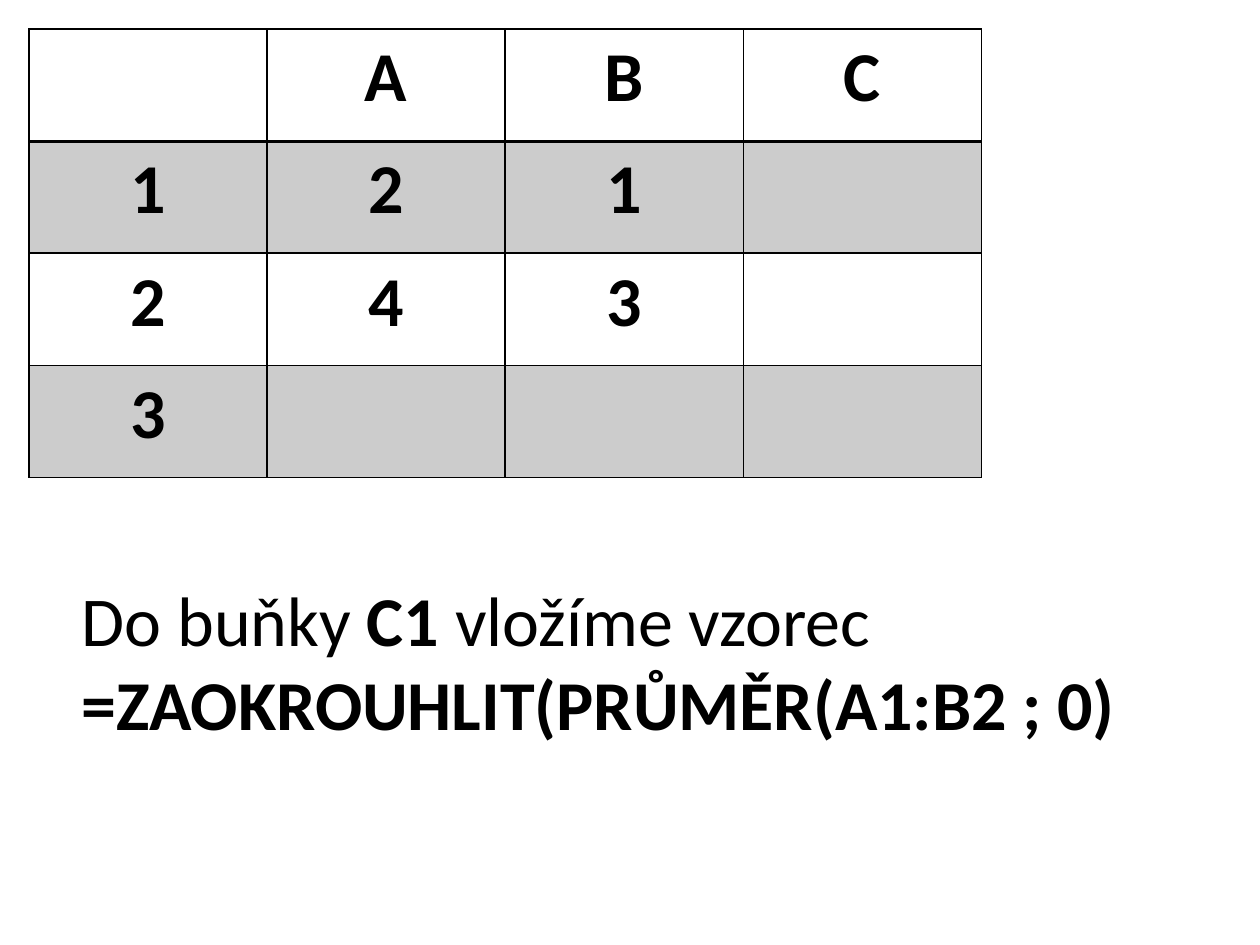
import pptx
import pptx.util
import pptx.oxml
import pptx.oxml.ns
import pptx.dml.color
import pptx.enum.text
from lxml import etree

Inches, Pt = pptx.util.Inches, pptx.util.Pt
qn = pptx.oxml.ns.qn


def color(code):
    return pptx.dml.color.RGBColor.from_string(code)


class Page:
    font, size, ink = "Calibri", 40, "000000"

    def __init__(self, slide):
        self.slide = slide

    def style(self, run, bold):
        run.font.name = self.font
        run.font.size = Pt(self.size)
        run.font.bold = bold
        run.font.color.rgb = color(self.ink)

    def edge(self, cell, side, width):
        props = cell._tc.get_or_add_tcPr()
        line = etree.SubElement(props, qn("a:ln" + side), w=str(Pt(width)))
        fill = etree.SubElement(line, qn("a:solidFill"))
        etree.SubElement(fill, qn("a:srgbClr"), val=self.ink)

    def shade(self, cell, alpha):
        cell.fill.solid()
        cell.fill.fore_color.rgb = color(self.ink)
        tone = cell._tc.tcPr.find(".//" + qn("a:solidFill") + "[last()]")
        tone = cell._tc.tcPr.find(qn("a:solidFill")).find(qn("a:srgbClr"))
        etree.SubElement(tone, qn("a:alpha"), val=str(alpha * 1000))

    def table(self, rows, left, top, wide, high):
        frame = self.slide.shapes.add_table(
            len(rows), len(rows[0]), Inches(left), Inches(top),
            Inches(wide * len(rows[0])), Inches(high * len(rows)))
        grid = frame.table
        grid.first_row = grid.horz_banding = False
        for r, row in enumerate(rows):
            for c, text in enumerate(row):
                cell = grid.cell(r, c)
                # The rule below the header row is thicker
                widths = {"L": 1, "R": 1, "T": 2 if r == 1 else 1,
                          "B": 2 if r == 0 else 1}
                for side, width in widths.items():
                    self.edge(cell, side, width)
                if r % 2:
                    self.shade(cell, 20)
                else:
                    cell.fill.background()
                if text:
                    cell.text_frame.text = text
                    para = cell.text_frame.paragraphs[0]
                    para.alignment = pptx.enum.text.PP_ALIGN.CENTER
                    self.style(para.runs[0], True)

    def text(self, parts, left, top, wide, high):
        box = self.slide.shapes.add_textbox(
            Inches(left), Inches(top), Inches(wide), Inches(high))
        frame = box.text_frame
        frame.word_wrap = True
        frame.auto_size = pptx.enum.text.MSO_AUTO_SIZE.SHAPE_TO_FIT_TEXT
        for words, bold in parts:
            run = frame.paragraphs[0].add_run()
            run.text = words
            self.style(run, bold)


def main():
    deck = pptx.Presentation()
    deck.slide_width, deck.slide_height = Inches(10), Inches(7.5)
    page = Page(deck.slides.add_slide(deck.slide_layouts[6]))

    # Sample sheet
    page.table([["", "A", "B", "C"],
                ["1", "2", "1", ""],
                ["2", "4", "3", ""],
                ["3", "", "", ""]], 0.23, 0.23, 1.89, 0.89)

    # Formula to enter
    page.text([("Do buňky ", False), ("C1 ", True),
               ("vložíme vzorec ", False),
               ("=ZAOKROUHLIT(PRŮMĚR(A1:B2 ; 0)", True)],
              0.55, 4.53, 8.67, 1.45)

    deck.save("out.pptx")


if __name__ == "__main__":
    main()
